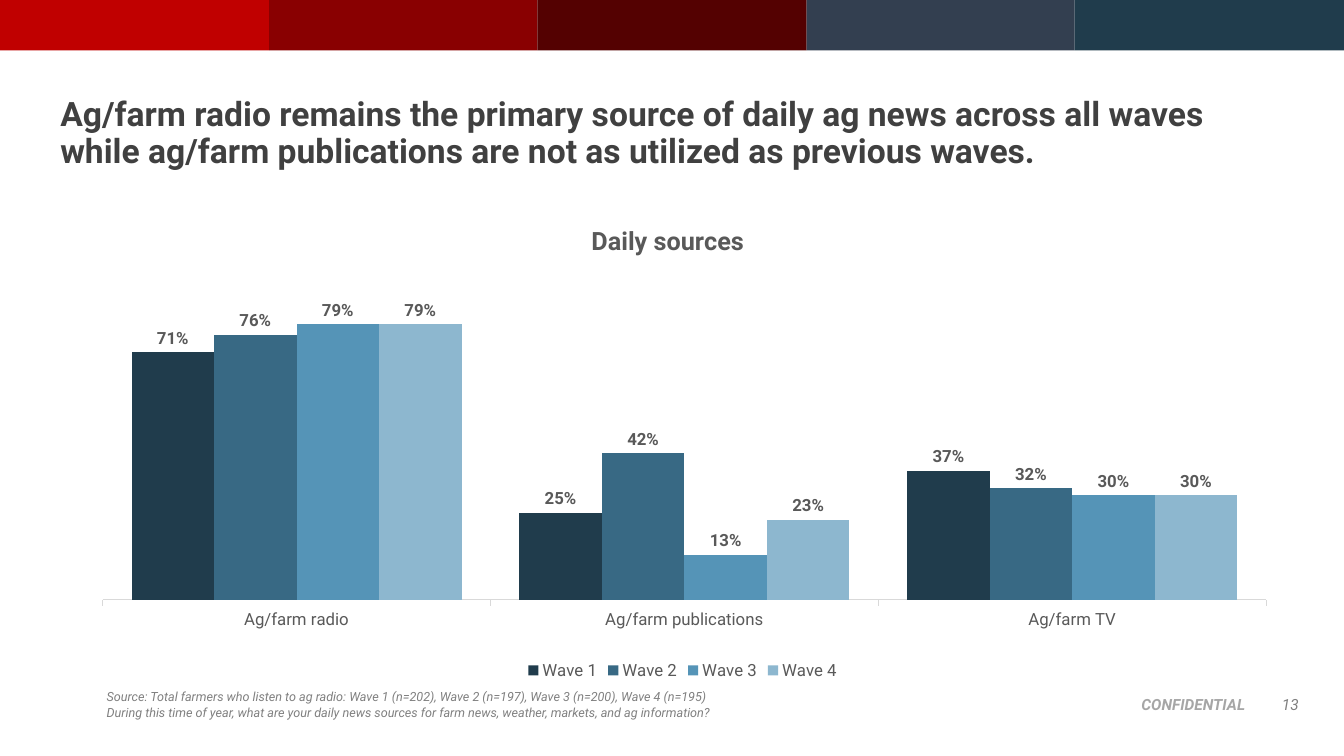
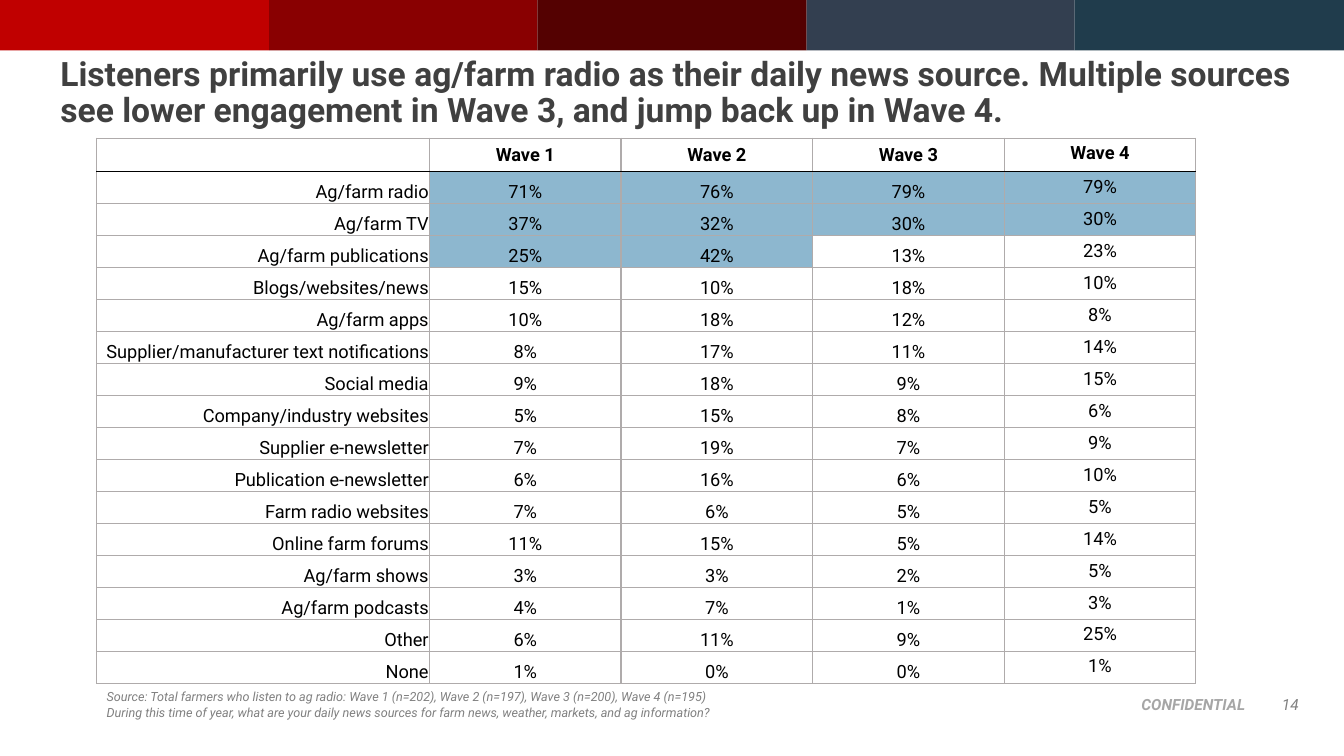
from pptx import Presentation
from pptx.chart.data import CategoryChartData
from pptx.dml.color import RGBColor
from pptx.enum.chart import XL_CHART_TYPE, XL_LABEL_POSITION, XL_LEGEND_POSITION, XL_TICK_MARK
from pptx.enum.shapes import MSO_SHAPE
from pptx.enum.text import MSO_ANCHOR, PP_ALIGN
from pptx.oxml import parse_xml
from pptx.oxml.ns import nsdecls, qn
from pptx.util import Pt

COLUMNS = XL_CHART_TYPE.COLUMN_CLUSTERED
OUTSIDE_END = XL_LABEL_POSITION.OUTSIDE_END
LEGEND_BOTTOM = XL_LEGEND_POSITION.BOTTOM
TICK_OUT, TICK_NONE = XL_TICK_MARK.OUTSIDE, XL_TICK_MARK.NONE
RECTANGLE = MSO_SHAPE.RECTANGLE
TOP, MIDDLE, BOTTOM = MSO_ANCHOR.TOP, MSO_ANCHOR.MIDDLE, MSO_ANCHOR.BOTTOM
LEFT, CENTER, RIGHT = PP_ALIGN.LEFT, PP_ALIGN.CENTER, PP_ALIGN.RIGHT

EMU_PER_PX = 9144  # 100 px to the inch
SLIDE_W, SLIDE_H = 1333, 750
FONT = "Roboto"
BLACK, WHITE = "000000", "FFFFFF"
TITLE_GREY, CHART_GREY, FOOTER_GREY = "404040", "595959", "808080"
CONFIDENTIAL_GREY, AXIS_GREY, BORDER_GREY = "A6A6A6", "D9D9D9", "AFABAB"
HIGHLIGHT = "8DB7CF"
BAND_COLOURS = ["C00000", "890001", "540101", "333F50", "203C4C"]
BAND_H = 50

WAVES = {"Wave 1": "203C4C", "Wave 2": "386984", "Wave 3": "5594B7", "Wave 4": HIGHLIGHT}
SOURCE_NOTE = [
    "Source: Total farmers who listen to ag radio: "
    "Wave 1 (n=202), Wave 2 (n=197), Wave 3 (n=200), Wave 4 (n=195)",
    "During this time of year, what are your daily news sources for farm news, "
    "weather, markets, and ag information?",
]
CHART_HEADLINE = (
    "Ag/farm radio remains the primary source of daily ag news across all waves "
    "while ag/farm publications are not as utilized as previous waves."
)
TABLE_HEADLINE = (
    "Listeners primarily use ag/farm radio as their daily news source. Multiple sources "
    "see lower engagement in Wave 3, and jump back up in Wave 4."
)

# Percent of listeners using each source daily, one value per wave
USAGE = {
    "Ag/farm radio": (71, 76, 79, 79),
    "Ag/farm TV": (37, 32, 30, 30),
    "Ag/farm publications": (25, 42, 13, 23),
    "Blogs/websites/news": (15, 10, 18, 10),
    "Ag/farm apps": (10, 18, 12, 8),
    "Supplier/manufacturer text notifications": (8, 17, 11, 14),
    "Social media": (9, 18, 9, 15),
    "Company/industry websites": (5, 15, 8, 6),
    "Supplier e-newsletter": (7, 19, 7, 9),
    "Publication e-newsletter": (6, 16, 6, 10),
    "Farm radio websites": (7, 6, 5, 5),
    "Online farm forums": (11, 15, 5, 14),
    "Ag/farm shows": (3, 3, 2, 5),
    "Ag/farm podcasts": (4, 7, 1, 3),
    "Other": (6, 11, 9, 25),
    "None": (1, 0, 0, 1),
}
CHARTED = ["Ag/farm radio", "Ag/farm publications", "Ag/farm TV"]
HIGHLIGHTED_WAVES = {"Ag/farm radio": 4, "Ag/farm TV": 4, "Ag/farm publications": 2}

LABEL_W, WAVE_W = 330, 190
HEADER_H, ROW_H = 33, 30


def px(*lengths):
    return [round(length * EMU_PER_PX) for length in lengths]


def rgb(value):
    return RGBColor.from_string(value)


def style(font, size, colour, bold=False, italic=False):
    font.name, font.size, font.bold, font.italic = FONT, Pt(size), bold, italic
    font.color.rgb = rgb(colour)


def add_run(paragraph, text, size, colour, align=LEFT, **emphasis):
    paragraph.alignment = align
    run = paragraph.add_run()
    run.text = text
    style(run.font, size, colour, **emphasis)
    return run


def add_text(slide, box, lines, size, colour, align=LEFT, anchor=TOP, **emphasis):
    frame = slide.shapes.add_textbox(*px(*box)).text_frame
    frame.word_wrap = True
    frame.vertical_anchor = anchor
    for i, line in enumerate(lines):
        paragraph = frame.add_paragraph() if i else frame.paragraphs[0]
        add_run(paragraph, line, size, colour, align, **emphasis)
    return frame


def make_number_field(run):
    """Turn a run into a slide number field."""
    field = parse_xml(
        f'<a:fld {nsdecls("a")} id="{{B6F15528-21DE-4FAA-801E-634DDDAF4B2B}}" type="slidenum"/>'
    )
    run._r.addprevious(field)
    for part in list(run._r):
        field.append(part)
    field.getparent().remove(run._r)


def add_framed_slide(deck, headline, headline_box, number):
    """Add a slide with the bands, headline, source note and footer."""
    slide = deck.slides.add_slide(deck.slide_layouts[6])
    edges = [round(i * SLIDE_W / len(BAND_COLOURS)) for i in range(len(BAND_COLOURS) + 1)]
    for colour, left, right in zip(BAND_COLOURS, edges, edges[1:]):
        band = slide.shapes.add_shape(RECTANGLE, *px(left, 0, right - left, BAND_H))
        band.shadow.inherit = False
        band.fill.solid()
        band.fill.fore_color.rgb = rgb(colour)
        band.line.fill.background()
    title = add_text(slide, headline_box, [headline], 24, TITLE_GREY, bold=True)
    title.paragraphs[0].line_spacing = 0.9
    add_text(slide, (96, 679, 952, 40), SOURCE_NOTE, 9, FOOTER_GREY, italic=True)
    add_text(slide, (1098, 685, 147, 29), ["CONFIDENTIAL"], 11, CONFIDENTIAL_GREY,
             RIGHT, bold=True, italic=True)
    page = add_text(slide, (1242, 679, 56, 40), [str(number)], 11, FOOTER_GREY,
                    RIGHT, MIDDLE, italic=True)
    make_number_field(page.paragraphs[0].runs[0])
    return slide


def set_layout(parent, index, target="", **place):
    """Give a chart part a manual place, in fractions of the chart."""
    for old in parent.findall(qn("c:layout")):
        parent.remove(old)
    inner = f'<c:layoutTarget val="{target}"/>' if target else ""
    inner += "".join(f'<c:{axis}Mode val="edge"/>' for axis in "xy")
    inner += "".join(f'<c:{key} val="{value}"/>' for key, value in place.items())
    parent.insert(index, parse_xml(
        f'<c:layout {nsdecls("c")}><c:manualLayout>{inner}</c:manualLayout></c:layout>'))


def add_sources_chart(slide):
    data = CategoryChartData(number_format="0%")
    data.categories = CHARTED
    for i, wave in enumerate(WAVES):
        data.add_series(wave, [USAGE[source][i] / 100 for source in CHARTED])
    chart = slide.shapes.add_chart(COLUMNS, *px(84, 178, 1186, 501), data).chart
    style(chart.font, 10, BLACK)

    chart.has_title = True
    add_run(chart.chart_title.text_frame.paragraphs[0], "Daily sources", 18, CHART_GREY,
            CENTER, bold=True)
    chart.chart_title.include_in_layout = False
    set_layout(chart.chart_title._element, 1, x=0.42, y=0.08)
    set_layout(chart._chartSpace.chart.plotArea, 0, "inner", x=0.015, y=0.142, w=0.973, h=0.691)

    chart.has_legend = True
    chart.legend.position = LEGEND_BOTTOM
    chart.legend.include_in_layout = False
    style(chart.legend.font, 12, CHART_GREY)

    sources = chart.category_axis
    sources.major_tick_mark, sources.minor_tick_mark = TICK_OUT, TICK_NONE
    sources.format.line.color.rgb = rgb(AXIS_GREY)
    sources.format.line.width = Pt(0.75)
    style(sources.tick_labels.font, 12, CHART_GREY)
    share = chart.value_axis
    share.minimum_scale, share.maximum_scale = 0, 1
    share.has_major_gridlines = False
    share.visible = False

    plot = chart.plots[0]
    plot.gap_width, plot.overlap, plot.vary_by_categories = 70, 0, False
    for wave, colour in zip(plot.series, WAVES.values()):
        wave.format.fill.solid()
        wave.format.fill.fore_color.rgb = rgb(colour)
        labels = wave.data_labels
        labels.show_value = True
        labels.number_format, labels.number_format_is_linked = "0%", False
        labels.position = OUTSIDE_END
        style(labels.font, 12, CHART_GREY, bold=True)


def set_borders(cell, **colours):
    """Draw 1 pt borders on the sides L, R, T and B, given in that order."""
    properties = cell._tc.get_or_add_tcPr()
    for i, (side, colour) in enumerate(colours.items()):
        properties.insert(i, parse_xml(
            f'<a:ln{side} {nsdecls("a")} w="12700"><a:solidFill><a:srgbClr val="{colour}"/>'
            f'</a:solidFill></a:ln{side}>'))


def add_usage_table(slide):
    rows = [["", *WAVES]]
    rows += [[source, *(f"{share}%" for share in shares)] for source, shares in USAGE.items()]
    widths = [LABEL_W] + [WAVE_W] * len(WAVES)
    heights = [HEADER_H] + [ROW_H] * len(USAGE)
    table = slide.shapes.add_table(
        len(rows), len(widths), *px(96, 137, sum(widths), sum(heights))).table
    table.first_row = table.horz_banding = False
    for column, width in zip(table.columns, px(*widths)):
        column.width = width
    for row, height in zip(table.rows, px(*heights)):
        row.height = height

    last = len(widths) - 1
    for r, texts in enumerate(rows):
        for c, text in enumerate(texts):
            cell = table.cell(r, c)
            if c < last:
                cell.margin_left, cell.margin_right, cell.margin_top, cell.margin_bottom = px(1, 1, 1, 0)
                cell.vertical_anchor = BOTTOM if r else MIDDLE
            if text:
                align = CENTER if c else RIGHT
                add_run(cell.text_frame.paragraphs[0], text, 13, BLACK, align, bold=r == 0)
            highlighted = 1 <= c <= HIGHLIGHTED_WAVES.get(texts[0], 0)
            cell.fill.solid()
            cell.fill.fore_color.rgb = rgb(HIGHLIGHT if highlighted else WHITE)
            set_borders(cell, L=BORDER_GREY, R=BORDER_GREY,
                        T=BLACK if r == 1 else BORDER_GREY,
                        B=BLACK if r == 0 else BORDER_GREY)


def main():
    deck = Presentation()
    deck.slide_width, deck.slide_height = px(SLIDE_W, SLIDE_H)
    deck.element.set("firstSlideNum", "13")
    add_sources_chart(add_framed_slide(deck, CHART_HEADLINE, (50, 92, 1233, 89), 13))
    add_usage_table(add_framed_slide(deck, TABLE_HEADLINE, (50, 52, 1249, 126), 14))
    deck.save("out.pptx")


if __name__ == "__main__":
    main()
